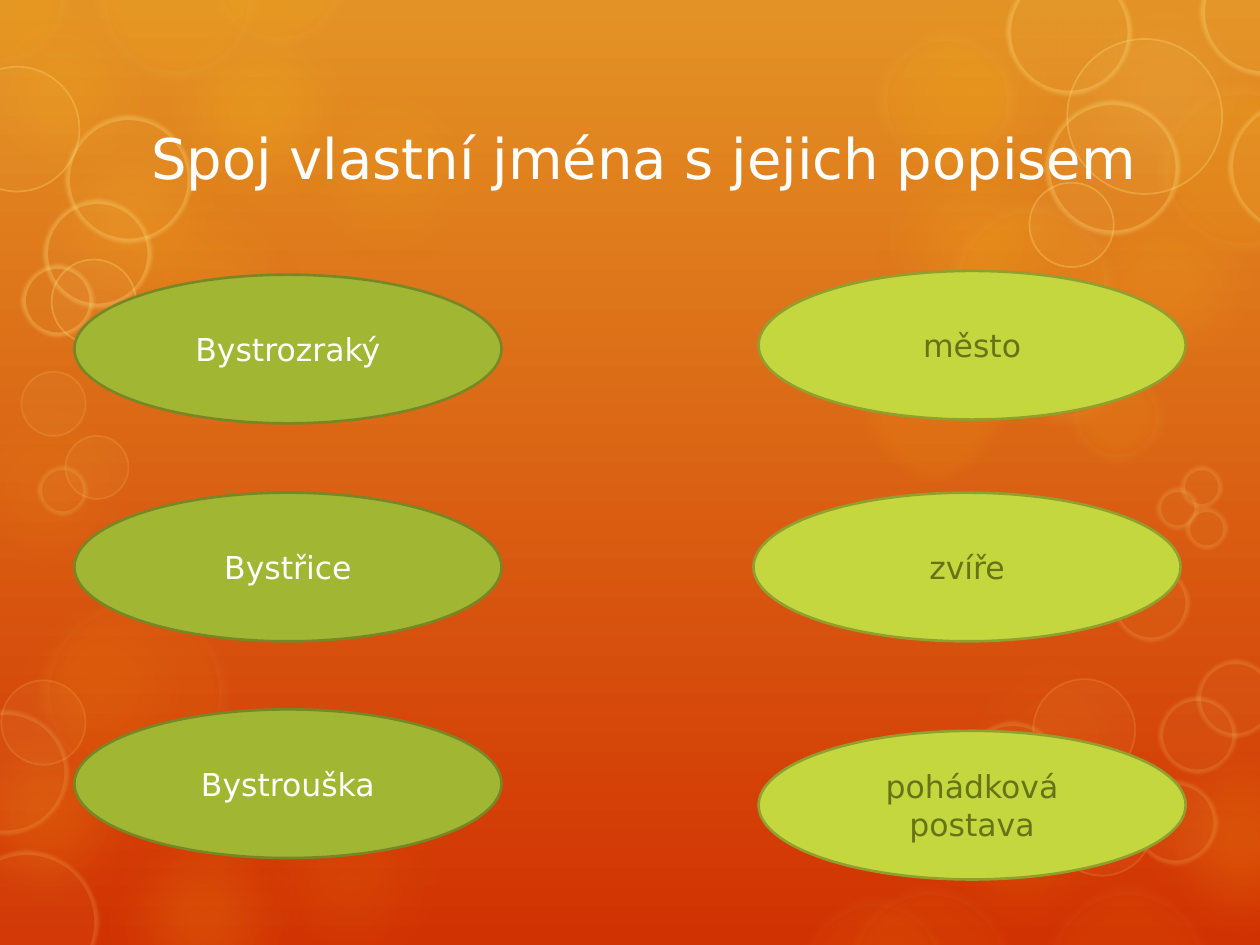
from lxml import etree
from pptx import Presentation
from pptx.dml.color import RGBColor
from pptx.enum.shapes import MSO_SHAPE
from pptx.enum.text import MSO_ANCHOR, PP_ALIGN
from pptx.oxml.ns import qn
from pptx.util import Inches, Pt

OVAL = MSO_SHAPE.OVAL
MIDDLE = MSO_ANCHOR.MIDDLE
LEFT, CENTER = PP_ALIGN.LEFT, PP_ALIGN.CENTER
FONT = "DejaVu Sans"

WHITE = RGBColor(0xFF, 0xFF, 0xFF)
SKY_TOP = RGBColor(0xE3, 0x93, 0x25)
SKY_BOTTOM = RGBColor(0xD1, 0x32, 0x02)
AMBER = RGBColor(0xFD, 0xC6, 0x1B)
CREAM = RGBColor(0xFE, 0xEB, 0xAE)
PALE = RGBColor(0xFF, 0xE2, 0x81)
GREEN = RGBColor(0xA1, 0xB6, 0x33)
GREEN_EDGE = RGBColor(0x77, 0x87, 0x26)
LIME = RGBColor(0xC4, 0xD7, 0x3F)
LIME_EDGE = RGBColor(0x91, 0x9F, 0x2F)
OLIVE = RGBColor(0x68, 0x73, 0x18)


def set_alpha(fill, percent):
    color = fill._xPr.find(".//" + qn("a:srgbClr"))
    etree.SubElement(color, qn("a:alpha")).set("val", str(percent * 1000))


def add_bubble(x, y, size, color, alpha, edge=None, width=0, edge_alpha=0, blur=0):
    s = shapes.add_shape(OVAL, Inches(x), Inches(y), Inches(size), Inches(size))
    s.shadow.inherit = False
    s.fill.solid()
    s.fill.fore_color.rgb = color
    set_alpha(s.fill, alpha)
    if edge is None:
        s.line.fill.background()
    else:
        s.line.color.rgb = edge
        s.line.width = Pt(width)
        set_alpha(s.line.fill, edge_alpha)
    if blur:
        effects = s._element.spPr.find(qn("a:effectLst"))
        etree.SubElement(effects, qn("a:softEdge")).set("rad", str(Inches(blur)))


prs = Presentation()
prs.slide_width, prs.slide_height = Inches(10), Inches(7.5)
slide = prs.slides.add_slide(prs.slide_layouts[5])
shapes = slide.shapes

fill = slide.background.fill
fill.gradient()
fill.gradient_angle = 270
for stop, color, position in zip(fill.gradient_stops, (SKY_TOP, SKY_BOTTOM), (0, 1)):
    stop.color.rgb = color
    stop.position = position

GLOWS = [
    (-0.25, 4.42, 8), (0.57, 1.2, 10), (2.05, 0.31, 10), (0.57, 6.27, 16),
    (-0.56, -0.32, 14), (1.01, -0.18, 20), (0, 0.72, 15), (8.2, -0.32, 10),
    (6.69, -0.29, 10), (8.2, 1.2, 15), (8.81, 5.62, 16), (7.29, 4.77, 5),
    (-0.68, 5.41, 16), (0.77, 5.24, 8), (6.69, 0.86, 15), (7.06, 5.62, 10),
    (1.73, 5.96, 8), (-0.69, 2.82, 8),
]
for x, y, alpha in GLOWS:
    add_bubble(x, y, 2.09, PALE if (x, y) == (8.2, -0.32) else AMBER, alpha, blur=0.44)
add_bubble(6.75, 2.62, 1.33, AMBER, 10, blur=0.14)

HALOS = [
    (9.18, 0.65, 1.37, 10, 6), (6.94, 0.23, 1.14, 10, 6), (7.52, 1.59, 1.33, 10, 6),
    (7.89, 2.24, 1.14, 10, 6), (8.47, 2.91, 0.79, 10, 6), (0.75, -0.65, 1.31, 10, 6),
    (1.64, -0.75, 1.14, 10, 6), (-0.57, -0.58, 1.14, 10, 6), (0.3, 4.73, 1.53, 6, 4),
    (6.32, 7.1, 1.24, 6, 4), (6.7, 7.01, 1.36, 6, 4), (8.28, 7.01, 1.34, 6, 4),
]
for x, y, size, alpha, edge_alpha in HALOS:
    add_bubble(x, y, size, AMBER, alpha, CREAM, 14, edge_alpha, blur=0.14)

SOFT_RINGS = [
    (-0.35, 6.75, 1.13, 15), (-0.44, 5.64, 0.98, 15), (0.52, 0.92, 1, 30),
    (0.35, 1.59, 0.85, 30), (0.17, 2.1, 0.57, 30), (7.99, -0.24, 0.99, 30),
    (9.53, -0.4, 1, 30), (9.75, 0.79, 1.06, 30), (8.3, 0.8, 1.06, 30),
    (7.63, 5.73, 0.81, 15), (9, 6.2, 0.66, 15), (8.83, 4.48, 0.61, 15),
    (9.2, 5.53, 0.61, 15), (9.5, 5.24, 0.61, 15), (9.37, 3.7, 0.33, 15),
    (9.18, 3.87, 0.33, 15), (9.41, 4.03, 0.33, 15), (0.3, 3.7, 0.39, 15),
]
for x, y, size, edge_alpha in SOFT_RINGS:
    add_bubble(x, y, size, PALE, 5, PALE, 5, edge_alpha, blur=0.03)

SHARP_RINGS = [
    (0.01, 5.4, 0.67, 15), (-0.36, 0.53, 0.99, 30), (0.41, 2.06, 0.67, 30),
    (8.47, 0.31, 1.23, 30), (8.17, 1.45, 0.67, 30), (8.34, 6.14, 0.81, 15),
    (8.2, 5.39, 0.81, 15), (0.17, 2.95, 0.51, 15), (0.52, 3.46, 0.5, 15),
]
for x, y, size, edge_alpha in SHARP_RINGS:
    add_bubble(x, y, size, PALE, 5, PALE, 1, edge_alpha)

title = shapes.title
shapes._spTree.append(title._element)
title.left, title.top = Inches(1.1), Inches(0.74)
title.width, title.height = Inches(8.07), Inches(1.01)
tf = title.text_frame
tf.text = "Spoj vlastní jména s jejich popisem"
tf.vertical_anchor = MIDDLE
p = tf.paragraphs[0]
p.alignment = LEFT
font = p.runs[0].font
font.name, font.size, font.color.rgb = FONT, Pt(32), WHITE

NAME_STYLE = (GREEN, GREEN_EDGE, WHITE)
MEANING_STYLE = (LIME, LIME_EDGE, OLIVE)
CARDS = [
    ("Bystrozraký", 0.59, 2.18, NAME_STYLE),
    ("Bystřice", 0.59, 3.91, NAME_STYLE),
    ("Bystrouška", 0.59, 5.63, NAME_STYLE),
    ("pohádková postava", 6.02, 5.8, MEANING_STYLE),
    ("zvíře", 5.98, 3.91, MEANING_STYLE),
    ("město", 6.02, 2.15, MEANING_STYLE),
]
for text, x, y, (face, edge, ink) in CARDS:
    s = shapes.add_shape(OVAL, Inches(x), Inches(y), Inches(3.39), Inches(1.18))
    s.shadow.inherit = False
    s.fill.solid()
    s.fill.fore_color.rgb = face
    s.line.color.rgb = edge
    s.line.width = Pt(1.5)
    tf = s.text_frame
    tf.text = text
    tf.word_wrap = True
    tf.vertical_anchor = MIDDLE
    p = tf.paragraphs[0]
    p.alignment = CENTER
    font = p.runs[0].font
    font.name, font.size, font.color.rgb = FONT, Pt(18), ink

prs.save("out.pptx")
